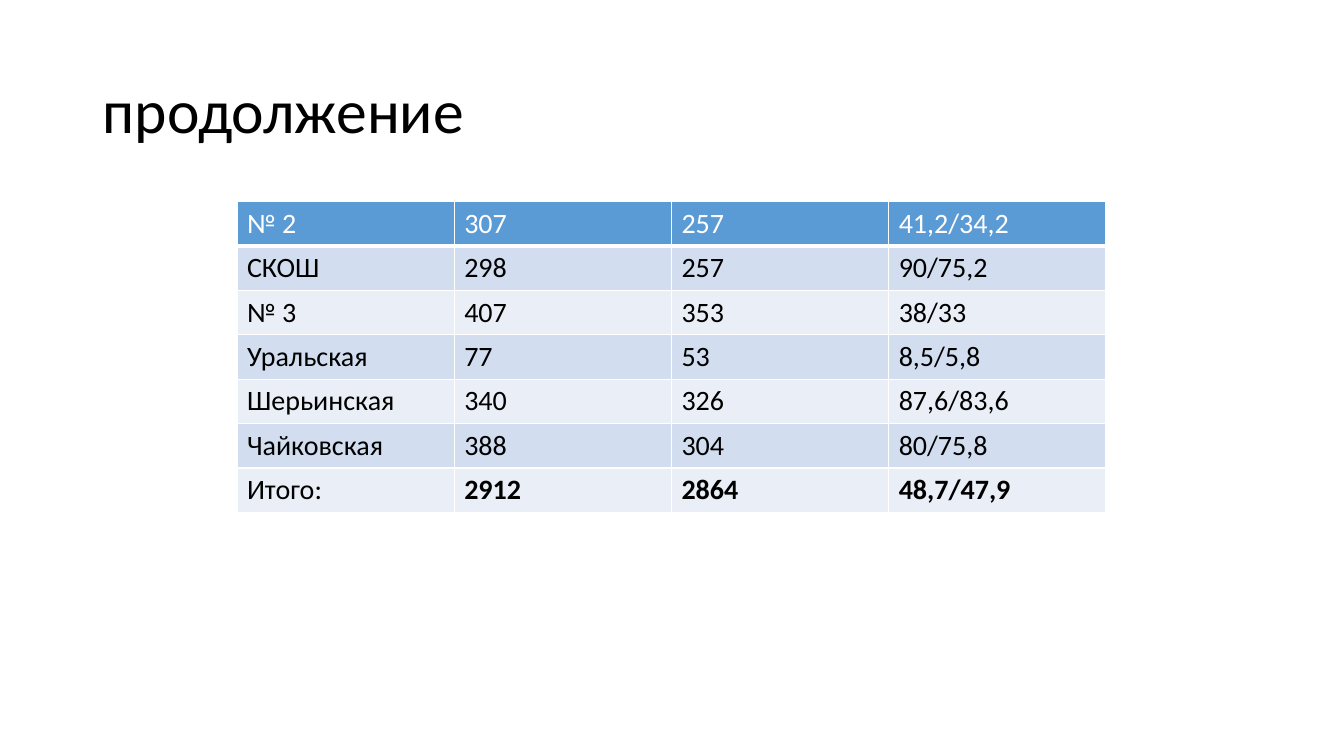
from dataclasses import dataclass

from lxml.etree import SubElement
from pptx import Presentation
from pptx.dml.color import RGBColor
from pptx.enum.text import MSO_ANCHOR, PP_ALIGN
from pptx.oxml.ns import qn
from pptx.util import Inches, Pt


@dataclass(frozen=True)
class Theme:
    font: str = "Calibri"
    title_size: int = 44
    table_size: int = 20
    text: str = "000000"
    header_text: str = "FFFFFF"
    header_fill: str = "5B9BD5"
    band_fills: tuple = ("D2DEEF", "EAEFF7")
    border: str = "FFFFFF"


THEME = Theme()

SCHOOL_ROWS = [
    ("№ 2", "307", "257", "41,2/34,2"),
    ("СКОШ", "298", "257", "90/75,2"),
    ("№ 3", "407", "353", "38/33"),
    ("Уральская", "77", "53", "8,5/5,8"),
    ("Шерьинская", "340", "326", "87,6/83,6"),
    ("Чайковская", "388", "304", "80/75,8"),
    ("Итого:", "2912", "2864", "48,7/47,9"),
]


def add_text(paragraph, text, size, color, bold=False):
    run = paragraph.add_run()
    run.text = text
    run.font.name = THEME.font
    run.font.size = Pt(size)
    run.font.bold = bold
    run.font.color.rgb = RGBColor.from_string(color)


def set_title(slide, text):
    title = slide.shapes.title
    title.left, title.top = Inches(0.92), Inches(0.4)
    title.width, title.height = Inches(11.5), Inches(1.45)
    title.text_frame.vertical_anchor = MSO_ANCHOR.MIDDLE
    paragraph = title.text_frame.paragraphs[0]
    paragraph.alignment = PP_ALIGN.LEFT
    paragraph.line_spacing = 0.9
    add_text(paragraph, text, THEME.title_size, THEME.text)


def set_borders(cell, widths):
    properties = cell._tc.get_or_add_tcPr()
    for side, width in widths.items():
        line = SubElement(properties, qn(f"a:ln{side}"), w=str(Pt(width)))
        fill = SubElement(line, qn("a:solidFill"))
        SubElement(fill, qn("a:srgbClr"), val=THEME.border)


def add_school_table(slide, rows):
    row_height = Inches(0.43)
    table = slide.shapes.add_table(
        len(rows), len(rows[0]), Inches(2.35), Inches(2),
        Inches(8.62), row_height * len(rows)).table
    last_row = len(rows) - 1
    for row_index, values in enumerate(rows):
        is_header = row_index == 0
        # Header fill, then alternating bands
        fill = THEME.header_fill if is_header else THEME.band_fills[(row_index - 1) % 2]
        color = THEME.header_text if is_header else THEME.text
        # A thick line divides the header from the body
        borders = {"L": 1, "R": 1, "T": 3 if row_index == 1 else 1,
                   "B": 3 if is_header else 1}
        for column_index, value in enumerate(values):
            cell = table.cell(row_index, column_index)
            set_borders(cell, borders)
            cell.fill.solid()
            cell.fill.fore_color.rgb = RGBColor.from_string(fill)
            # Totals are bold, their label is not
            is_total = row_index == last_row and column_index > 0
            add_text(cell.text_frame.paragraphs[0], value,
                     THEME.table_size, color, is_total)


def main():
    presentation = Presentation()
    presentation.slide_width = Inches(13.33)
    presentation.slide_height = Inches(7.5)
    # Title Only layout
    slide = presentation.slides.add_slide(presentation.slide_layouts[5])
    set_title(slide, "продолжение")
    add_school_table(slide, SCHOOL_ROWS)
    presentation.save("out.pptx")


if __name__ == "__main__":
    main()
